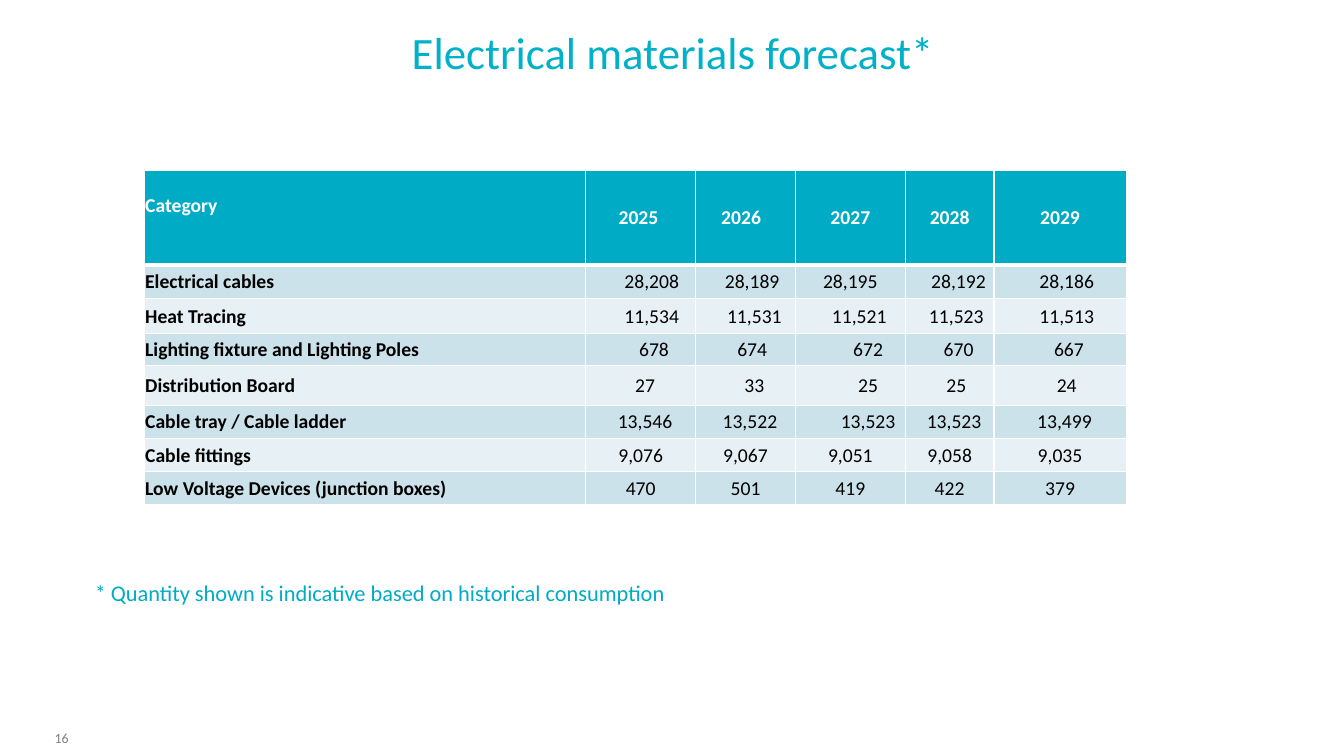
from pptx import Presentation
from pptx import util as u
from pptx.dml.color import RGBColor
from pptx.enum import text as t
from pptx.oxml import parse_xml
from pptx.oxml.ns import nsdecls

TEAL, WHITE, BLACK, GREY = "00ABC5", "FFFFFF", "000000", "808080"
BANDS = ["CCE2EA", "E7F1F5"]
LEFT, MID, RIGHT = t.PP_ALIGN.LEFT, t.PP_ALIGN.CENTER, t.PP_ALIGN.RIGHT
INSET, STEP = 0.01, 0.044  # cell inset; one unit of sideways shift

COLS = [4.38, 1.09, 0.99, 1.09, 0.88, 1.31]
HEAD = ["Category", "2025", "2026", "2027", "2028", "2029"]
# Row height, label, values, shift of each value (right is positive)
ROWS = [
    (0.33, "Electrical cables", "28,208 28,189 28,195 28,192 28,186", [5, 3, 0, 4, 3]),
    (0.35, "Heat Tracing", "11,534 11,531 11,521 11,523 11,513", [5, 4, 4, 3, 3]),
    (0.32, "Lighting fixture and Lighting Poles", "678 674 672 670 667", [6, 3, 8, 4, 4]),
    (0.39, "Distribution Board", "27 33 25 25 24", [2, 4, 8, 3, 3]),
    (0.33, "Cable tray / Cable ladder", "13,546 13,522 13,523 13,523 13,499", [2, 2, 8, 2, 2]),
    (0.33, "Cable fittings", "9,076 9,067 9,051 9,058 9,035", [0] * 5),
    (0.33, "Low Voltage Devices (junction boxes)", "470 501 419 422 379", [0] * 5),
]


def color(code):
    return RGBColor.from_string(code)


def write(frame, words, size=14, ink=BLACK, bold=False, align=LEFT):
    para = frame.paragraphs[0]
    para.alignment = align
    run = para.add_run()
    run.text = words
    font = run.font
    font.name, font.size, font.bold = "Calibri", u.Pt(size), bold
    font.color.rgb = color(ink)


class Deck:
    def __init__(self):
        self.prs = Presentation()
        self.prs.slide_width = u.Inches(13.33)
        self.prs.slide_height = u.Inches(7.5)
        self.slide = self.prs.slides.add_slide(self.prs.slide_layouts[5])

    def title(self, words, box, **fmt):
        shape = self.slide.shapes.title
        shape.left, shape.top, shape.width, shape.height = map(u.Inches, box)
        shape.text_frame.vertical_anchor = t.MSO_ANCHOR.TOP
        write(shape.text_frame, words, **fmt)

    def label(self, words, box, anchor=t.MSO_ANCHOR.TOP, inset=0.1, **fmt):
        frame = self.slide.shapes.add_textbox(*map(u.Inches, box)).text_frame
        frame.word_wrap = True
        frame.vertical_anchor = anchor
        frame.margin_left = u.Inches(inset)
        write(frame, words, **fmt)

    def cell(self, cell, words, fill, edges, shift=0, lift=0, **fmt):
        props = cell._tc.get_or_add_tcPr()
        for side, width in edges.items():
            props.append(parse_xml(
                f'<a:ln{side} {nsdecls("a")} w="{u.Pt(width)}"><a:solidFill>'
                f'<a:srgbClr val="{WHITE}"/></a:solidFill></a:ln{side}>'))
        cell.fill.solid()
        cell.fill.fore_color.rgb = color(fill)
        cell.vertical_anchor = t.MSO_ANCHOR.MIDDLE
        cell.margin_left = u.Inches(INSET + max(shift, 0) * STEP)
        cell.margin_right = u.Inches(INSET + max(-shift, 0) * STEP)
        cell.margin_top = u.Inches(INSET)
        cell.margin_bottom = u.Inches(lift)
        write(cell.text_frame, words, **fmt)

    def table(self, box):
        shape = self.slide.shapes.add_table(len(ROWS) + 1, len(COLS), *map(u.Inches, box))
        grid = shape.table
        grid.horz_banding = False
        for col, width in zip(grid.columns, COLS):
            col.width = u.Inches(width)

        # Header row
        grid.rows[0].height = u.Inches(0.94)
        edges = dict(L=1, R=1, T=1, B=3)
        shifts = [0, -1, -2, 0, 0, 0]
        for c, (words, shift) in enumerate(zip(HEAD, shifts)):
            self.cell(grid.cell(0, c), words, TEAL, edges, shift, lift=0 if c else 0.24,
                      ink=WHITE, bold=True, align=MID if c else LEFT)

        # Body rows
        for r, (height, name, values, shifts) in enumerate(ROWS, 1):
            grid.rows[r].height = u.Inches(height)
            edges = dict(L=1, R=1, T=3 if r == 1 else 1, B=1)
            for c, (words, shift) in enumerate(zip([name] + values.split(), [0] + shifts)):
                self.cell(grid.cell(r, c), words, BANDS[(r - 1) % 2], edges, shift,
                          bold=c == 0, align=MID if c else LEFT)


def main():
    deck = Deck()
    # Title and page number
    deck.title("Electrical materials forecast*", (0.01, 0.19, 13.33, 0.91),
               size=32, ink="01B1C9", align=MID)
    deck.label("16", (0.11, 7.14, 0.67, 0.36), anchor=t.MSO_ANCHOR.MIDDLE,
               size=10, ink=GREY, align=RIGHT)
    # Forecast table and footnote
    deck.table((1.43, 1.69, 9.73, 3.33))
    deck.label("* Quantity shown is indicative based on historical consumption",
               (0.79, 5.7, 10.6, 0.64), inset=0.15, size=16, ink=TEAL)
    deck.prs.save("out.pptx")


if __name__ == "__main__":
    main()
